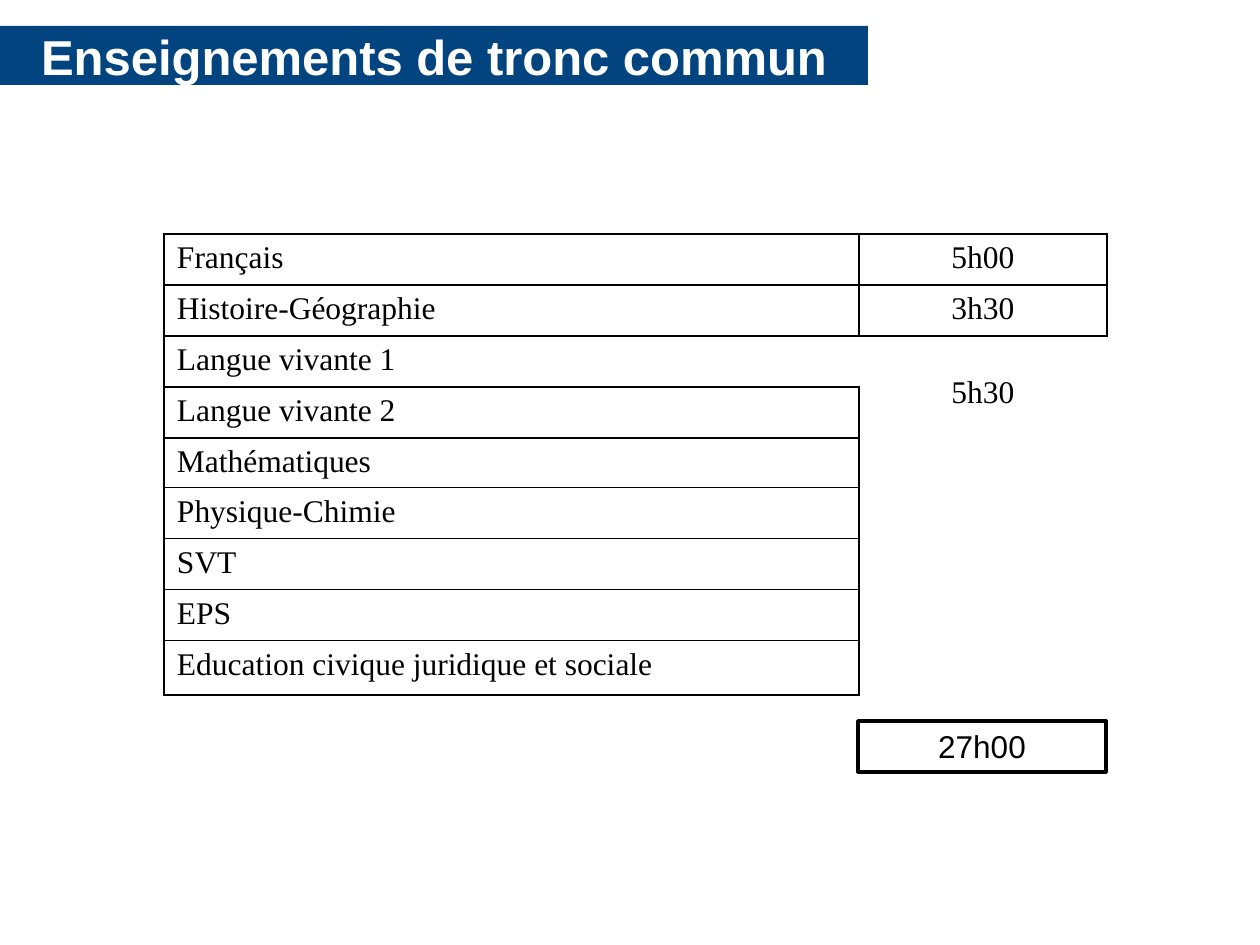
from pptx import Presentation
from pptx.util import Pt
from pptx.dml.color import RGBColor as RGB
from pptx.enum.shapes import MSO_SHAPE as Kind
from pptx.enum.text import PP_ALIGN as Align, MSO_ANCHOR as Anchor
from pptx.oxml.ns import qn
from lxml.etree import SubElement as Sub

BLUE = RGB(0x02, 0x44, 0x80)
WHITE = RGB(255, 255, 255)
BLACK = RGB(0, 0, 0)
PX = 7257

TITLE = "Enseignements de tronc commun"
TOTAL = "27h00"
COURSES = [
    "Français",
    "Histoire-Géographie",
    "Langue vivante 1",
    "Langue vivante 2",
    "Mathématiques",
    "Physique-Chimie",
    "SVT",
    "EPS",
    "Education civique juridique et sociale",
]
HOURS = ["5h00", "3h30", "5h30"]
OPEN = len(HOURS) - 1
LAST = len(COURSES) - 1

LEFT, TOP = 164, 234
COLS = [695, 248]
SPAN, END = 407, 54
THIN, THICK = 0.75, 1.08

HEAD = dict(name="Arial", size=Pt(28), bold=True)
SUM = dict(name="Arial", size=Pt(18))
BODY = dict(name="Times New Roman", size=Pt(18))


def px(*vals):
    return [v * PX for v in vals]


def write(para, text, look, color, align, space=1.0):
    para.alignment, para.line_spacing = align, space
    run = para.add_run()
    run.text = text
    for key, val in look.items():
        setattr(run.font, key, val)
    run.font.color.rgb = color


def box(place, fill, text, look, color, anchor, pad, space=1.0):
    shape = slide.shapes.add_shape(Kind.RECTANGLE, *px(*place))
    shape.shadow.inherit = False
    shape.fill.solid()
    shape.fill.fore_color.rgb = fill
    frame = shape.text_frame
    frame.word_wrap = True
    frame.vertical_anchor = anchor
    frame.margin_top, frame.margin_bottom = px(pad, 6)
    write(frame.paragraphs[0], text, look, color, Align.CENTER, space)
    return shape


def edge(cell, sizes):
    props = cell._tc.get_or_add_tcPr()
    for spot, (side, size) in enumerate(zip("LRTB", sizes)):
        line = props.makeelement(qn(f"a:ln{side}"), {"w": str(int(Pt(size)))})
        props.insert(spot, line)
        if size:
            Sub(Sub(line, qn("a:solidFill")), qn("a:srgbClr"), val=str(BLACK))
        else:
            Sub(line, qn("a:noFill"))


def style(cell, sizes, top=9):
    cell.fill.solid()
    cell.fill.fore_color.rgb = WHITE
    cell.margin_left, cell.margin_right = px(13, 13)
    cell.margin_top, cell.margin_bottom = px(top, 6)
    edge(cell, sizes)


deck = Presentation()
deck.slide_width, deck.slide_height = px(1260, 945)
slide = deck.slides.add_slide(deck.slide_layouts[6])

banner = box((0, 26, 868, 59), BLUE, TITLE, HEAD, WHITE, Anchor.MIDDLE, 6)
banner.line.fill.background()

total = box((858, 721, 248, 51), WHITE, TOTAL, SUM, BLACK, Anchor.TOP, 9, 0.93)
total.line.color.rgb = BLACK
total.line.width = Pt(2)

marks = [round(i * SPAN / LAST) for i in range(LAST + 1)] + [SPAN + END]
grid = slide.shapes.add_table(
    len(COURSES), 2, *px(LEFT, TOP, sum(COLS), marks[-1])).table
grid.first_row = grid.horz_banding = False
for col, wide in zip(grid.columns, px(*COLS)):
    col.width = wide
for row, low, high in zip(grid.rows, marks, marks[1:]):
    row.height = (high - low) * PX

for i, name in enumerate(COURSES):
    cell, side = grid.cell(i, 0), grid.cell(i, 1)
    over = THIN if i else THICK
    under = THICK if i == LAST else THIN
    wall = 0 if i == OPEN else THIN
    style(cell, (THICK, wall, over, under))
    write(cell.text_frame.paragraphs[0], name, BODY, BLACK, Align.LEFT, 0.93)
    if i < OPEN:
        style(side, (THIN, THICK, over, THIN))
    else:
        style(side, (wall, 0, 0 if i > OPEN else THIN, 0), 42 if i == OPEN else 9)
    if i <= OPEN:
        write(side.text_frame.paragraphs[0], HOURS[i], BODY, BLACK, Align.CENTER, 0.93)

grid.cell(OPEN, 1).merge(grid.cell(LAST, 1))

deck.save("out.pptx")
